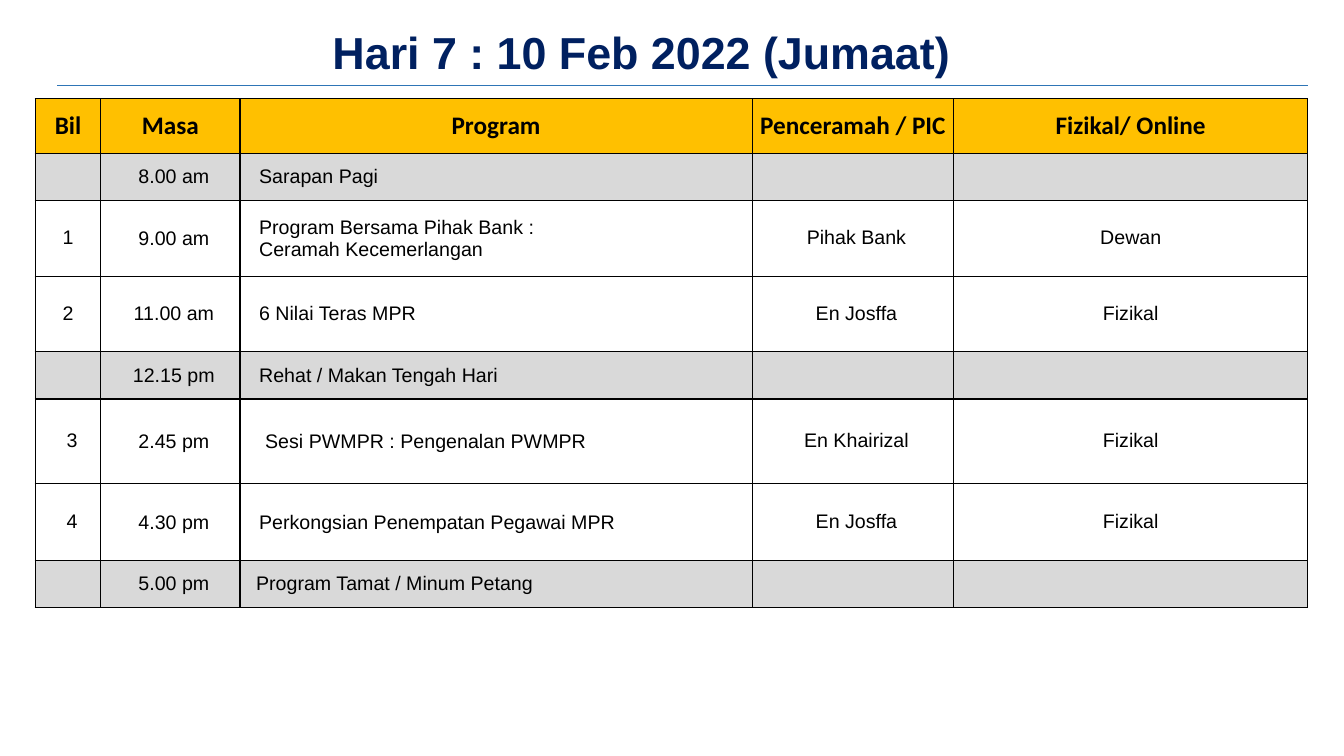
import pptx
import pptx.dml.color
import pptx.enum.shapes
import pptx.enum.text
import pptx.oxml
import pptx.oxml.ns
import pptx.util
from pptx.dml.color import RGBColor
from pptx.util import Inches

NAVY = RGBColor(0x00, 0x20, 0x60)
BLUE = RGBColor(0x2E, 0x75, 0xB6)
AMBER = RGBColor(0xFF, 0xC0, 0x00)
GREY = RGBColor(0xD9, 0xD9, 0xD9)
WHITE = RGBColor(0xFF, 0xFF, 0xFF)
BLACK = RGBColor(0x00, 0x00, 0x00)

CENTER = pptx.enum.text.PP_ALIGN.CENTER
LEFT = pptx.enum.text.PP_ALIGN.LEFT
MIDDLE = pptx.enum.text.MSO_ANCHOR.MIDDLE

HEADINGS = ["Bil", "Masa", "Program", "Penceramah / PIC", "Fizikal/ Online"]
COLUMN_WIDTHS = [0.65, 1.38, 5.08, 2, 3.51]
COLUMN_ALIGNMENTS = [CENTER, CENTER, LEFT, CENTER, CENTER]
LINE_SPACINGS = [15, 16, 16, 15, 15]
HEADING_HEIGHT = 0.54
BREAK_HEIGHT = 0.47

# Row height, indent of Bil, indent of Program, texts; a break has no Bil
SESSIONS = [
    (BREAK_HEIGHT, 0, 0.19, ["", "8.00 am", "Sarapan Pagi", "", ""]),
    (0.75, 0, 0.19, ["1", "9.00 am",
                     "Program Bersama Pihak Bank :\nCeramah Kecemerlangan",
                     "Pihak Bank", "Dewan"]),
    (0.75, 0, 0.19, ["2", "11.00 am", "6 Nilai Teras MPR", "En Josffa", "Fizikal"]),
    (BREAK_HEIGHT, 0, 0.19, ["", "12.15 pm", "Rehat / Makan Tengah Hari", "", ""]),
    (0.84, 0.08, 0.25, ["3", "2.45 pm", "Sesi PWMPR : Pengenalan PWMPR",
                        "En Khairizal", "Fizikal"]),
    (0.76, 0.08, 0.19, ["4", "4.30 pm", "Perkongsian Penempatan Pegawai MPR",
                        "En Josffa", "Fizikal"]),
    (BREAK_HEIGHT, 0, 0.16, ["", "5.00 pm", "Program Tamat / Minum Petang", "", ""]),
]


def style_paragraph(paragraph, size, font_name, color, bold, alignment):
    paragraph.alignment = alignment
    for run in paragraph.runs:
        run.font.size = pptx.util.Pt(size)
        run.font.name = font_name
        run.font.bold = bold
        run.font.color.rgb = color


def add_title(slide, text):
    title = slide.shapes.add_textbox(Inches(1.9), Inches(0.24), Inches(8.93), Inches(0.54))
    frame = title.text_frame
    frame.word_wrap = True
    frame.vertical_anchor = MIDDLE
    frame.text = text
    style_paragraph(frame.paragraphs[0], 32, "Arial", NAVY, True, CENTER)


def add_rule(slide):
    rule = slide.shapes.add_connector(
        pptx.enum.shapes.MSO_CONNECTOR.STRAIGHT,
        Inches(0.57), Inches(0.85), Inches(12.97), Inches(0.85))
    rule.line.color.rgb = BLUE
    rule.line.width = pptx.util.Pt(0.5)
    rule._element.spPr.append(pptx.oxml.parse_xml(
        f"<a:effectLst {pptx.oxml.ns.nsdecls('a')}/>"))


def add_borders(cell):
    properties = cell._tc.get_or_add_tcPr()
    for position, side in enumerate(("lnL", "lnR", "lnT", "lnB")):
        properties.insert(position, pptx.oxml.parse_xml(
            f'<a:{side} {pptx.oxml.ns.nsdecls("a")} w="12700"><a:solidFill>'
            f'<a:srgbClr val="{BLACK}"/></a:solidFill></a:{side}>'))


def prepare_cell(cell, text, fill, side_margin):
    cell.margin_left = cell.margin_right = Inches(side_margin)
    cell.margin_top = cell.margin_bottom = 0
    cell.vertical_anchor = MIDDLE
    cell.fill.solid()
    cell.fill.fore_color.rgb = fill
    add_borders(cell)
    cell.text_frame.text = text


def fill_heading(cell, text):
    prepare_cell(cell, text, AMBER, 0.07)
    style_paragraph(cell.text_frame.paragraphs[0], 18, "Calibri", BLACK, True, CENTER)


def fill_session_cell(cell, text, fill, alignment, spacing, indent):
    prepare_cell(cell, text, fill, 0)
    for paragraph in cell.text_frame.paragraphs:
        style_paragraph(paragraph, 14, "Arial", BLACK, False, alignment)
        paragraph.line_spacing = pptx.util.Pt(spacing)
        paragraph._p.get_or_add_pPr().set("marL", str(Inches(indent)))


def add_schedule(slide):
    heights = [HEADING_HEIGHT] + [session[0] for session in SESSIONS]
    schedule = slide.shapes.add_table(
        len(heights), len(HEADINGS), Inches(0.35), Inches(0.98),
        Inches(sum(COLUMN_WIDTHS)), Inches(sum(heights))).table
    for column, width in zip(schedule.columns, COLUMN_WIDTHS):
        column.width = Inches(width)
    for row, height in zip(schedule.rows, heights):
        row.height = Inches(height)

    for column, heading in enumerate(HEADINGS):
        fill_heading(schedule.cell(0, column), heading)

    for row, (_, number_indent, program_indent, texts) in enumerate(SESSIONS, 1):
        fill = WHITE if texts[0] else GREY
        indents = [number_indent, 0.07, program_indent, 0.07, 0]
        columns = zip(texts, COLUMN_ALIGNMENTS, LINE_SPACINGS, indents)
        for column, (text, alignment, spacing, indent) in enumerate(columns):
            fill_session_cell(schedule.cell(row, column), text, fill,
                              alignment, spacing, indent)


def main():
    presentation = pptx.Presentation()
    presentation.slide_width = Inches(13.33)
    presentation.slide_height = Inches(7.5)
    slide = presentation.slides.add_slide(presentation.slide_layouts[6])

    # Title with the rule below it
    add_rule(slide)
    add_title(slide, "Hari 7 : 10 Feb 2022 (Jumaat)")

    # Programme of the day
    add_schedule(slide)

    presentation.save("out.pptx")


if __name__ == "__main__":
    main()
